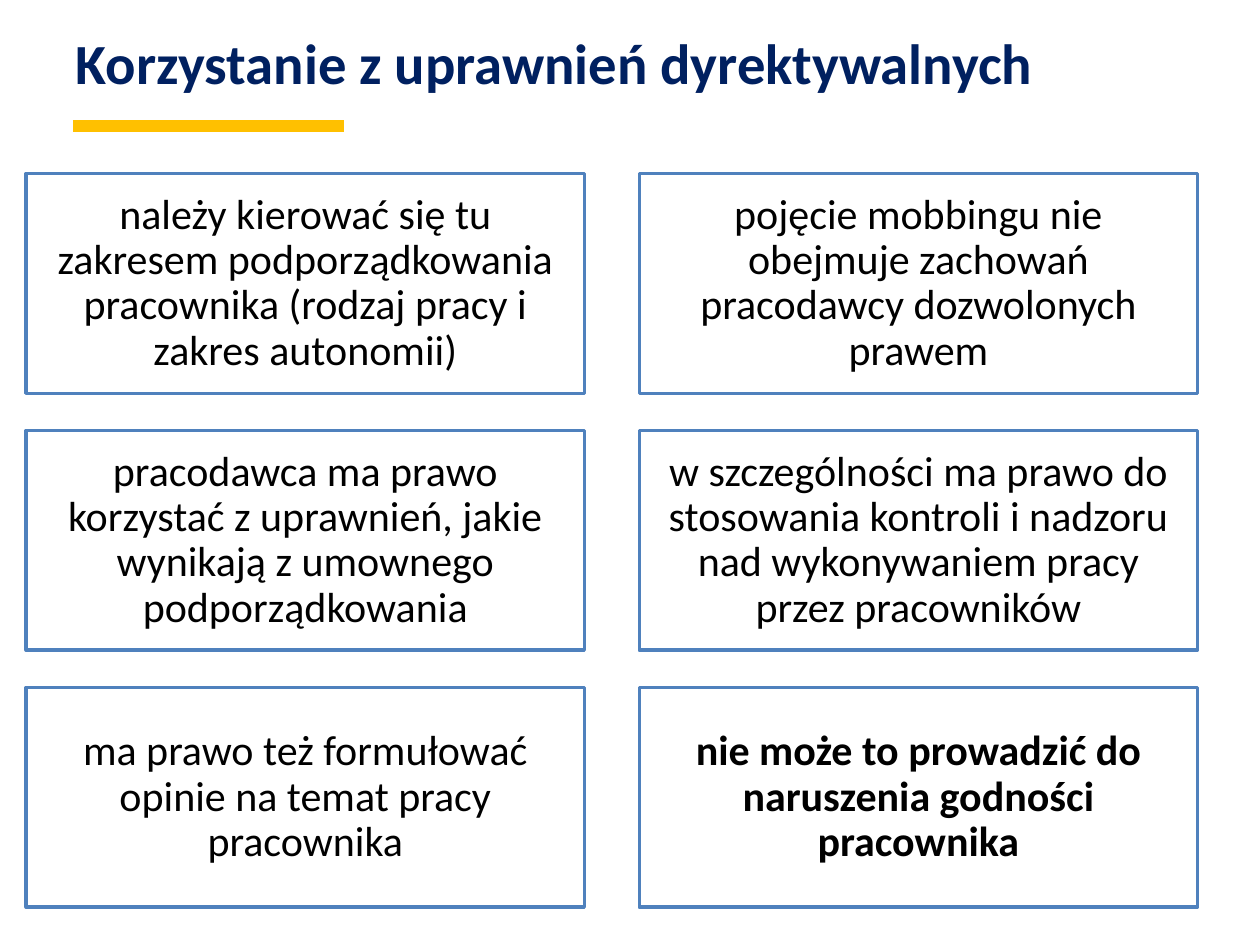
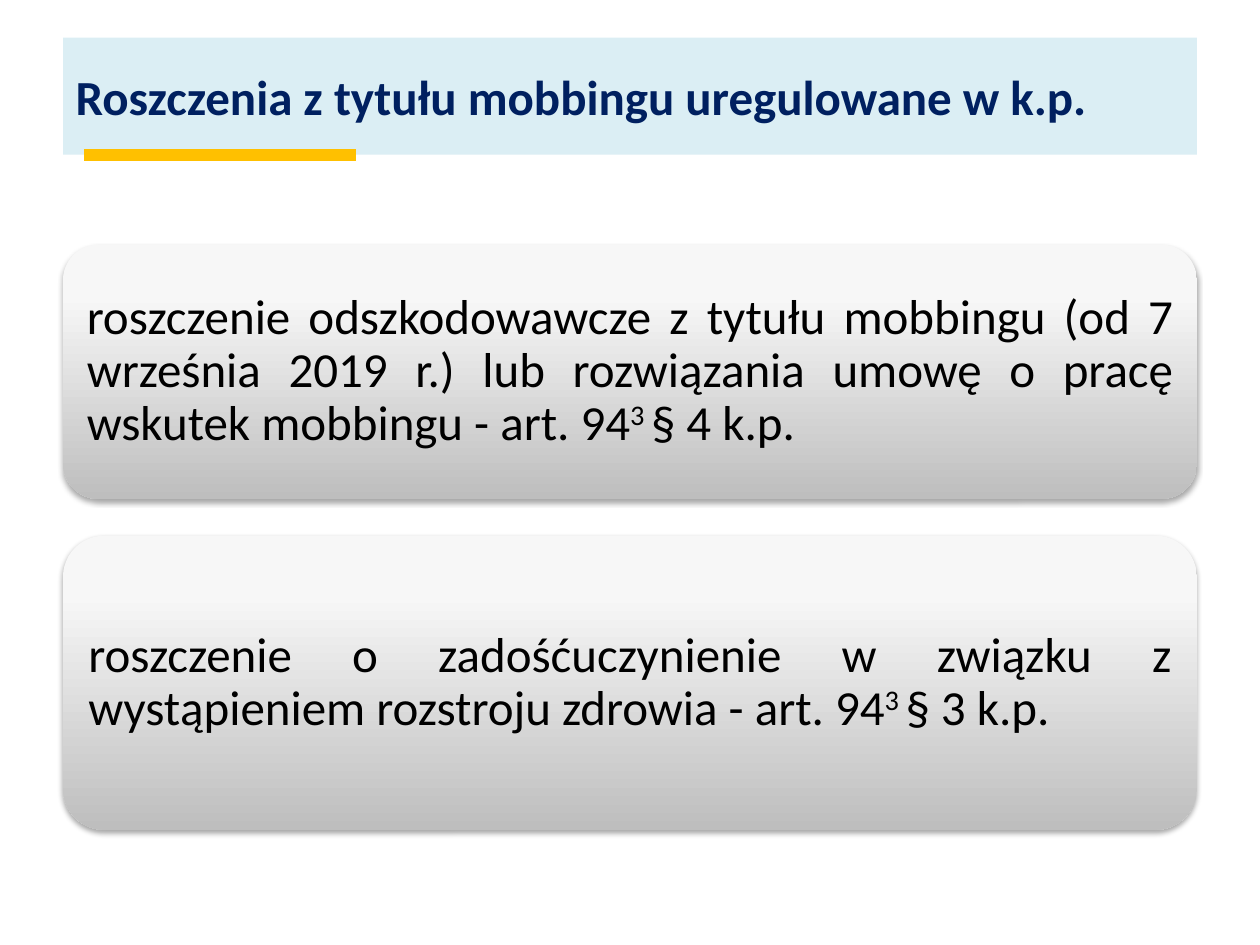
from dataclasses import dataclass

from lxml.etree import SubElement
from pptx import Presentation
from pptx.dml.color import RGBColor
from pptx.enum.shapes import MSO_CONNECTOR, MSO_SHAPE
from pptx.enum.text import MSO_ANCHOR, MSO_AUTO_SIZE, PP_ALIGN
from pptx.oxml.ns import qn
from pptx.util import Cm, Pt


@dataclass(frozen=True)
class Theme:
    font: str = "Calibri"
    navy: RGBColor = RGBColor(0x00, 0x20, 0x60)
    gold: RGBColor = RGBColor(0xFF, 0xC0, 0x00)
    blue: RGBColor = RGBColor(0x4F, 0x81, 0xBD)
    pale_blue: RGBColor = RGBColor(0xDB, 0xEE, 0xF4)
    light_grey: RGBColor = RGBColor(0xF7, 0xF7, 0xF7)
    dark_grey: RGBColor = RGBColor(0xBE, 0xBE, 0xBE)
    white: RGBColor = RGBColor(0xFF, 0xFF, 0xFF)
    black: RGBColor = RGBColor(0x00, 0x00, 0x00)
    powers_title: float = 32.4
    claims_title: float = 28
    powers_text: float = 24
    claims_text: float = 28
    box_border: float = 2
    accent_width: float = 7


THEME = Theme()
TITLE_ONLY = 5
MARGIN, TITLE_TOP, CONTENT_WIDTH = 1.27, 0.76, 22.86
ACCENT_LENGTH = 5.47

POWERS = [
    "należy kierować się tu zakresem podporządkowania pracownika (rodzaj pracy i zakres autonomii)",
    "pojęcie mobbingu nie obejmuje zachowań pracodawcy dozwolonych prawem",
    "pracodawca ma prawo korzystać z uprawnień, jakie wynikają z umownego podporządkowania",
    "w szczególności ma prawo do stosowania kontroli i nadzoru nad wykonywaniem pracy przez pracowników",
    "ma prawo też formułować opinie na temat pracy pracownika",
    "nie może to prowadzić do naruszenia godności pracownika",
]

CLAIMS = [
    (4.93, 5.13,
     "roszczenie odszkodowawcze z tytułu mobbingu (od 7 września 2019 r.) "
     "lub rozwiązania umowę o pracę wskutek mobbingu - art. 94", "§ 4 k.p."),
    (10.8, 5.93,
     "roszczenie o zadośćuczynienie w związku z wystąpieniem rozstroju "
     "zdrowia - art. 94", "§ 3 k.p."),
]


def style_paragraph(paragraph, size, color, alignment, bold=False):
    paragraph.alignment = alignment
    paragraph.font.name = THEME.font
    paragraph.font.size = Pt(size)
    paragraph.font.bold = bold
    paragraph.font.color.rgb = color


def prepare_frame(frame, inset):
    frame.word_wrap = True
    frame.auto_size = MSO_AUTO_SIZE.NONE
    frame.vertical_anchor = MSO_ANCHOR.MIDDLE
    frame.margin_left = frame.margin_right = Cm(inset)
    frame.margin_top = frame.margin_bottom = Cm(inset)


def add_titled_slide(deck, heading, height, size):
    slide = deck.slides.add_slide(deck.slide_layouts[TITLE_ONLY])
    title = slide.shapes.title
    title.left, title.top = Cm(MARGIN), Cm(TITLE_TOP)
    title.width, title.height = Cm(CONTENT_WIDTH), Cm(height)
    title.text_frame.text = heading
    title.text_frame.auto_size = MSO_AUTO_SIZE.NONE
    title.text_frame.vertical_anchor = MSO_ANCHOR.MIDDLE
    style_paragraph(title.text_frame.paragraphs[0], size, THEME.navy,
                    PP_ALIGN.LEFT, bold=True)
    return slide


def add_accent(slide, left, top):
    accent = slide.shapes.add_connector(
        MSO_CONNECTOR.STRAIGHT, Cm(left), Cm(top), Cm(left + ACCENT_LENGTH), Cm(top))
    accent.line.color.rgb = THEME.gold
    accent.line.width = Pt(THEME.accent_width)
    SubElement(accent._element.spPr, qn("a:effectLst"))


def add_power_box(slide, left, top, width, height, statement, bold):
    box = slide.shapes.add_shape(
        MSO_SHAPE.RECTANGLE, Cm(left), Cm(top), Cm(width), Cm(height))
    box.shadow.inherit = False
    box.fill.solid()
    box.fill.fore_color.rgb = THEME.white
    box.line.color.rgb = THEME.blue
    box.line.width = Pt(THEME.box_border)
    prepare_frame(box.text_frame, 0.24)
    paragraph = box.text_frame.paragraphs[0]
    paragraph.text = statement
    paragraph.line_spacing = 0.9
    style_paragraph(paragraph, THEME.powers_text, THEME.black, PP_ALIGN.CENTER, bold)


def add_soft_shadow(shape):
    shape.shadow.inherit = False
    effects = shape._element.spPr.find(qn("a:effectLst"))
    shadow = SubElement(effects, qn("a:outerShdw"), blurRad=str(Pt(3.1)),
                        dist=str(Pt(1.8)), dir="5400000", rotWithShape="0")
    shade = SubElement(shadow, qn("a:srgbClr"), val=str(THEME.black))
    SubElement(shade, qn("a:alpha"), val="35000")


def fill_grey_gradient(shape):
    shape.fill.gradient()
    shape.fill.gradient_angle = 270
    stops = ((0.2, THEME.light_grey), (1, THEME.dark_grey))
    for stop, (position, color) in zip(shape.fill.gradient_stops, stops):
        stop.position = position
        stop.color.rgb = color


def add_claim_card(slide, top, height, claim, provision):
    card = slide.shapes.add_shape(
        MSO_SHAPE.ROUNDED_RECTANGLE, Cm(MARGIN), Cm(top), Cm(CONTENT_WIDTH), Cm(height))
    card.adjustments[0] = 0.14
    fill_grey_gradient(card)
    card.line.fill.background()
    add_soft_shadow(card)
    prepare_frame(card.text_frame, 0.27)
    paragraph = card.text_frame.paragraphs[0]
    paragraph.line_spacing = 0.9
    style_paragraph(paragraph, THEME.claims_text, THEME.black, PP_ALIGN.JUSTIFY)
    for words, baseline in ((claim, 0), ("3 ", 30000), (provision, 0)):
        run = paragraph.add_run()
        run.text = words
        if baseline:
            run._r.get_or_add_rPr().set("baseline", str(baseline))


def build_powers_slide(deck):
    slide = add_titled_slide(
        deck, "Korzystanie z uprawnień dyrektywalnych", 0.97, THEME.powers_title)
    left, top, width, height = 0.53, 3.5, 11.25, 4.43
    column_step, row_step = 12.36, 5.18
    for index, statement in enumerate(POWERS):
        row, column = divmod(index, 2)
        add_power_box(slide, left + column * column_step, top + row * row_step,
                      width, height, statement, bold=index == len(POWERS) - 1)
    add_accent(slide, 1.47, 2.54)


def build_claims_slide(deck):
    slide = add_titled_slide(
        deck, "Roszczenia z tytułu mobbingu uregulowane w k.p.", 2.36, THEME.claims_title)
    slide.shapes.title.fill.solid()
    slide.shapes.title.fill.fore_color.rgb = THEME.pale_blue
    for top, height, claim, provision in CLAIMS:
        add_claim_card(slide, top, height, claim, provision)
    add_accent(slide, 1.7, 3.12)


def main():
    deck = Presentation()
    deck.slide_width, deck.slide_height = Cm(25.4), Cm(19.05)
    build_powers_slide(deck)
    build_claims_slide(deck)
    deck.save("out.pptx")


if __name__ == "__main__":
    main()
